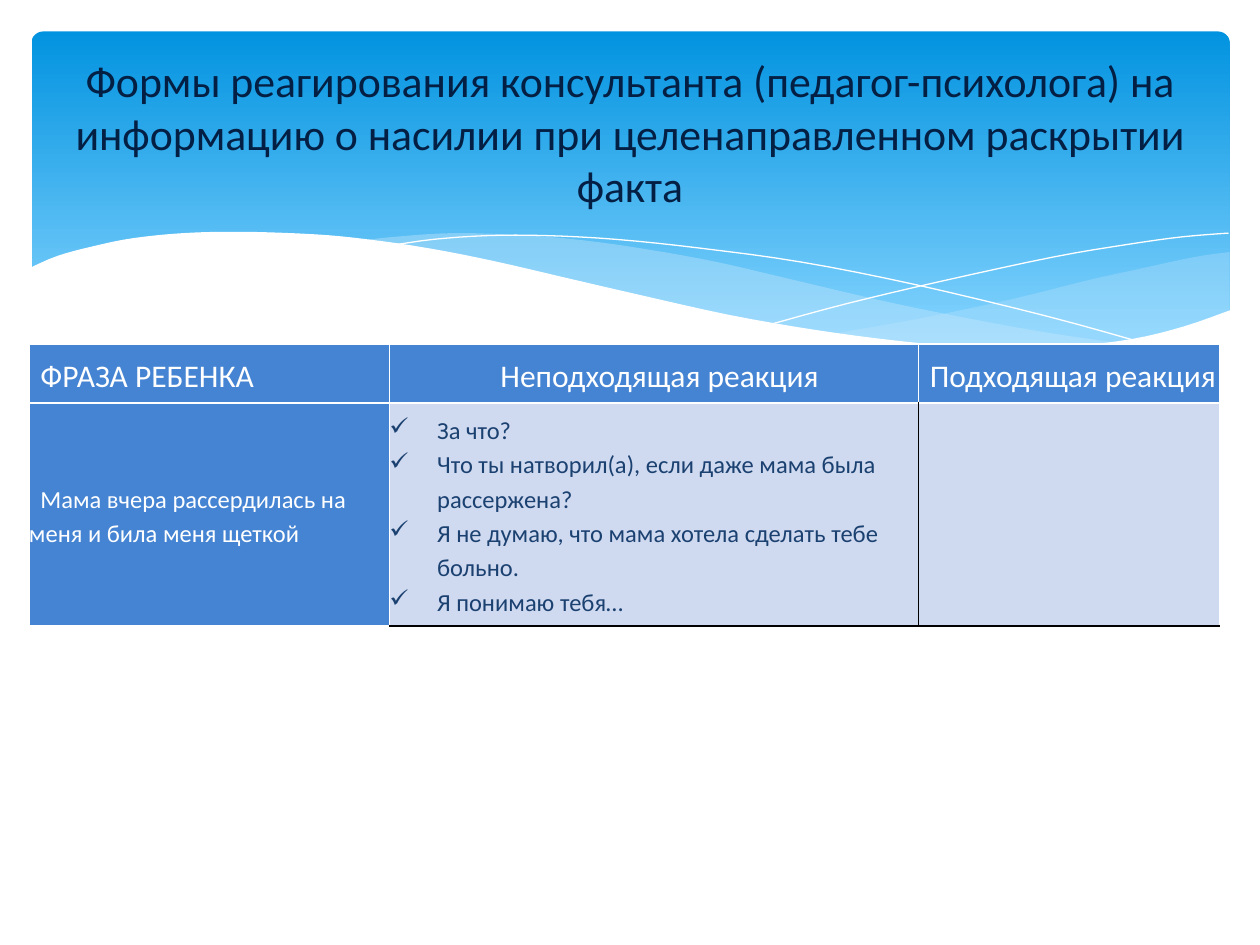
from lxml.etree import SubElement
from pptx import Presentation
from pptx.dml.color import RGBColor
from pptx.enum.shapes import MSO_SHAPE
from pptx.enum.text import MSO_ANCHOR, PP_ALIGN
from pptx.oxml.ns import qn
from pptx.util import Inches, Pt

HUE = {
    "sky": "0293E0", "pale": "83D3FE", "mist": "C6E7FC", "white": "FFFFFF",
    "black": "000000", "navy": "041F44", "ink": "1B4171",
    "head": "4584D3", "cell": "CFD9EF",
}
FONT = "Calibri"

# Key points of the wave edges, in inches
RIGHT_TOP = [(9.76, 2), (9.48, 2.04), (9.06, 2.13), (8.61, 2.23),
             (8.05, 2.37), (7.29, 2.53), (6.61, 2.65)]
RIGHT_LOW = [(6.61, 2.65), (7.05, 2.71), (7.57, 2.76), (8.03, 2.78),
             (8.54, 2.76), (8.97, 2.7), (9.35, 2.62), (9.76, 2.47)]
MID_TOP = [(8.93, 2.73), (8.37, 2.65), (7.75, 2.54), (7.06, 2.4),
           (6.29, 2.22), (5.69, 2.08), (5.14, 1.98), (4.65, 1.91),
           (4.2, 1.87), (3.61, 1.85), (3.13, 1.88), (2.86, 1.91)]
MID_LOW = [(2.86, 1.91), (3.42, 1.99), (4.04, 2.11), (4.49, 2.22),
           (5.3, 2.4), (6.01, 2.55), (6.65, 2.66), (7.22, 2.74),
           (7.73, 2.77), (8.18, 2.78), (8.57, 2.77), (8.93, 2.73)]
FALL = [(3.09, 1.95), (3.44, 1.9), (3.87, 1.87), (4.33, 1.87), (4.89, 1.9),
        (5.56, 1.97), (6.36, 2.08), (7.27, 2.26), (8.31, 2.51), (9.07, 2.72)]
RISE = [(6.13, 2.57), (6.72, 2.41), (7.48, 2.23), (8.36, 2.04),
        (8.95, 1.94), (9.38, 1.88), (9.75, 1.85)]
FRONT = [(9.77, 2.46), (9.4, 2.59), (8.99, 2.69), (8.5, 2.75), (8.09, 2.77),
         (7.61, 2.75), (7.08, 2.7), (6.48, 2.62), (5.79, 2.5), (5.03, 2.33),
         (4.47, 2.2), (3.91, 2.07), (3.4, 1.97), (2.92, 1.9), (2.5, 1.86),
         (1.93, 1.84), (1.46, 1.85), (1.06, 1.89), (0.76, 1.95),
         (0.46, 2.03), (0.23, 2.13)]

TITLE = ("Формы реагирования консультанта (педагог-психолога) на "
         "информацию о насилии при целенаправленном раскрытии факта")
HEADS = ["ФРАЗА РЕБЕНКА", "Неподходящая реакция", "Подходящая реакция"]
PHRASE = "Мама вчера рассердилась на меня и била меня щеткой"
WRONG = ["За что?",
         "Что ты натворил(а), если даже мама была рассержена?",
         "Я не думаю, что мама хотела сделать тебе больно.",
         "Я понимаю тебя…"]


def color(name):
    return RGBColor.from_string(HUE[name])


def paint(fill, name):
    fill.solid()
    fill.fore_color.rgb = color(name)


def curve(pts, steps=4):
    """Catmull-Rom curve through the key points."""
    ext = [pts[0], *pts, pts[-1]]
    out = [pts[0]]
    for a, b, c, d in zip(ext, ext[1:], ext[2:], ext[3:]):
        for i in range(1, steps + 1):
            t = i / steps
            out.append(tuple(
                (2 * q + (r - p) * t + (2 * p - 5 * q + 4 * r - s) * t ** 2
                 + (3 * q - p - 3 * r + s) * t ** 3) / 2
                for p, q, r, s in zip(a, b, c, d)))
    return out


def trace(slide, pts, closed):
    pts = [(Inches(x), Inches(y)) for x, y in pts]
    pen = slide.shapes.build_freeform(*pts[0])
    pen.add_line_segments(pts[1:], close=closed)
    shape = pen.convert_to_shape()
    shape.shadow.inherit = False
    return shape


def add_wave(slide, pts, name, alpha=100):
    shape = trace(slide, pts, True)
    paint(shape.fill, name)
    shape.line.fill.background()
    if alpha < 100:
        tint = shape.fill._xPr.find(".//" + qn("a:srgbClr"))
        SubElement(tint, qn("a:alpha"), val=str(alpha * 1000))


def add_thread(slide, pts):
    shape = trace(slide, curve(pts), False)
    shape.fill.background()
    paint(shape.line.fill, "white")
    shape.line.width = Pt(0)


def add_panel(slide):
    shape = slide.shapes.add_shape(
        MSO_SHAPE.ROUNDED_RECTANGLE,
        Inches(0.25), Inches(0.25), Inches(9.51), Inches(2.7))
    shape.adjustments[0] = 0.034
    shape.shadow.inherit = False
    shape.line.fill.background()
    shape.fill.gradient()
    shape.fill.gradient_angle = 270
    for stop, name, pos in zip(shape.fill.gradient_stops,
                               ("sky", "pale"), (0, 0.9)):
        stop.color.rgb = color(name)
        stop.position = pos


def add_run(para, text, size, name):
    run = para.add_run()
    run.text = text
    run.font.size = Pt(size)
    run.font.name = FONT
    run.font.color.rgb = color(name)


def add_title(slide):
    box = slide.shapes.add_textbox(
        Inches(0.5), Inches(0.37), Inches(9), Inches(1.37))
    frame = box.text_frame
    frame.word_wrap = True
    frame.vertical_anchor = MSO_ANCHOR.MIDDLE
    para = frame.paragraphs[0]
    para.alignment = PP_ALIGN.CENTER
    add_run(para, TITLE, 25, "navy")


def style_cell(cell, name, dark=""):
    """Fill a cell; the sides named in dark get black borders."""
    cell.margin_left = cell.margin_right = 0
    cell.margin_top = cell.margin_bottom = 0
    cell.vertical_anchor = MSO_ANCHOR.MIDDLE
    props = cell._tc.get_or_add_tcPr()
    for side in "LRTB":
        line = SubElement(props, qn("a:ln" + side), w=str(Pt(1)))
        solid = SubElement(line, qn("a:solidFill"))
        hue = HUE["black" if side in dark else "white"]
        SubElement(solid, qn("a:srgbClr"), val=hue)
    paint(cell.fill, name)


def write_cell(cell, texts, size, name, align=PP_ALIGN.LEFT, mark=None):
    frame = cell.text_frame
    for i, text in enumerate(texts):
        para = frame.add_paragraph() if i else frame.paragraphs[0]
        para.alignment = align
        para.line_spacing = 1.15
        left, first = (0.38, -0.38) if mark else (0, 0.09)
        props = para._p.get_or_add_pPr()
        props.set("marL", str(Inches(left)))
        props.set("indent", str(Inches(first)))
        if mark:
            SubElement(props, qn("a:buChar"), char=mark)
        add_run(para, text, size, name)


def add_grid(slide):
    table = slide.shapes.add_table(
        2, 3, Inches(0.23), Inches(2.73), Inches(9.45), Inches(2.24)).table
    for col, width in zip(table.columns, (2.86, 4.2, 2.39)):
        col.width = Inches(width)
    for row, height in zip(table.rows, (0.47, 1.77)):
        row.height = Inches(height)

    # Header row
    for i, text in enumerate(HEADS):
        cell = table.cell(0, i)
        style_cell(cell, "head")
        align = PP_ALIGN.CENTER if i == 1 else PP_ALIGN.LEFT
        write_cell(cell, [text], 18, "white", align)

    # Phrase and reactions
    phrase, wrong, right = table.rows[1].cells
    style_cell(phrase, "head")
    write_cell(phrase, [PHRASE], 14, "white")
    style_cell(wrong, "cell", "RB")
    write_cell(wrong, WRONG, 14, "ink", mark="✓")
    style_cell(right, "cell", "LB")


def main():
    prs = Presentation()
    prs.slide_width, prs.slide_height = Inches(10), Inches(7.5)
    slide = prs.slides.add_slide(prs.slide_layouts[6])
    paint(slide.background.fill, "white")

    # Banner with waves
    add_panel(slide)
    add_wave(slide, curve(RIGHT_TOP) + curve(RIGHT_LOW), "mist", 29)
    add_wave(slide, curve(MID_TOP) + curve(MID_LOW), "mist", 40)
    add_thread(slide, FALL)
    add_thread(slide, RISE)
    add_wave(slide, curve(FRONT) + [(0.23, 3.29), (9.77, 3.29)], "white")

    # Content
    add_title(slide)
    add_grid(slide)
    prs.save("out.pptx")


if __name__ == "__main__":
    main()
